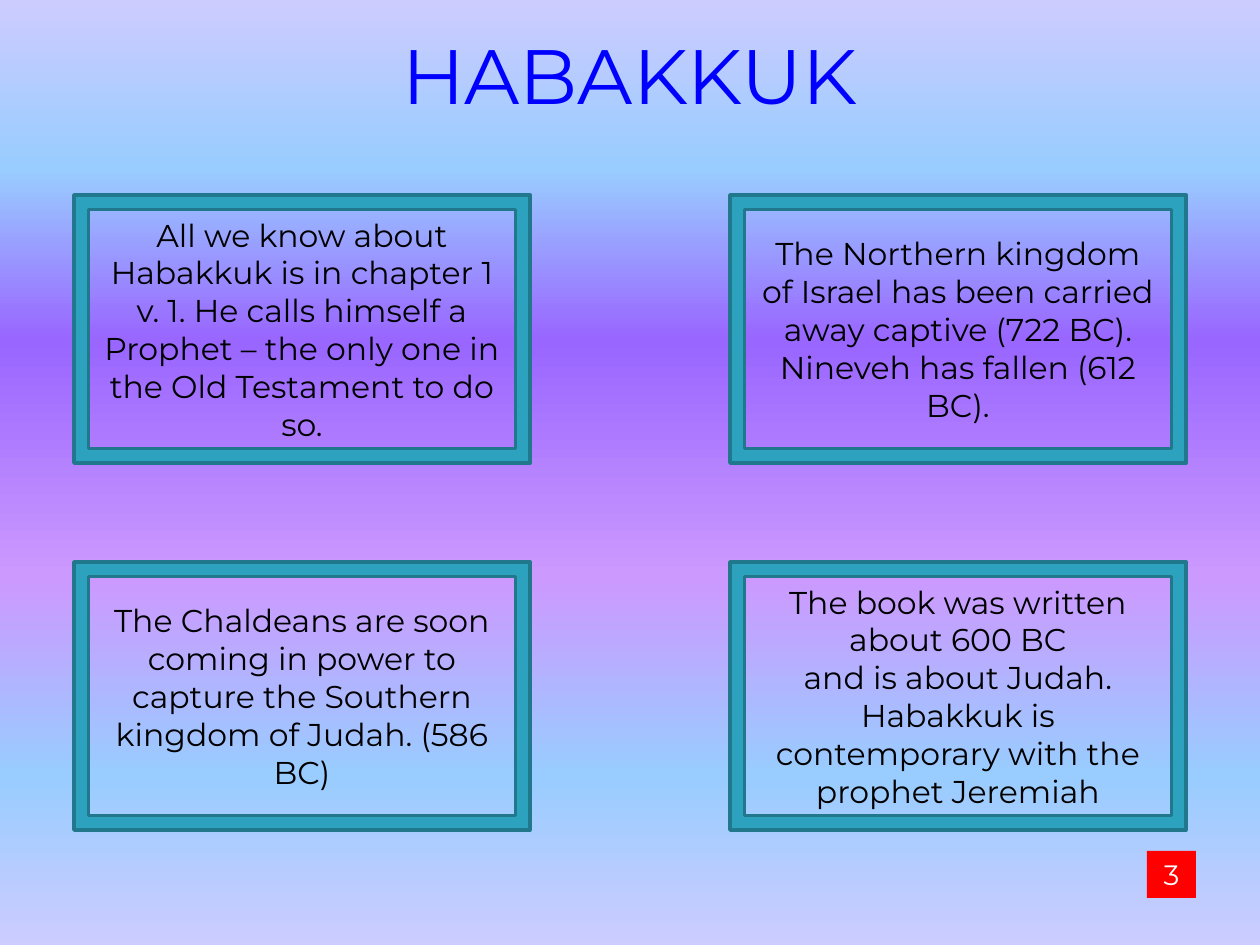
from lxml import etree
from pptx import Presentation, util as u
from pptx.dml.color import RGBColor
from pptx.enum import shapes, text
from pptx.oxml.ns import qn

# Content
TITLE = "HABAKKUK"
FACTS = [
    ["All we know about Habakkuk is in chapter 1 v. 1. He calls himself a "
     "Prophet – the only one in the Old Testament to do so.",
     "The Northern kingdom of Israel has been carried away captive (722 BC). "
     "Nineveh has fallen (612 BC)."],
    ["The Chaldeans are soon coming in power to capture the Southern kingdom "
     "of Judah. (586 BC)",
     "The book was written about 600 BC\nand is about Judah. Habakkuk is "
     "contemporary with the prophet Jeremiah"],
]
PAGE = "3"

# Style
FONT = "Montserrat"
BLUE = RGBColor(0x00, 0x00, 0xFF)
BLACK = RGBColor(0x00, 0x00, 0x00)
WHITE = RGBColor(0xFF, 0xFF, 0xFF)
RED = RGBColor(0xFF, 0x00, 0x00)
TEAL = RGBColor(0x2D, 0xA2, 0xBF)
DARK_TEAL = RGBColor(0x21, 0x78, 0x8D)
LAVENDER = RGBColor(0xCC, 0xCC, 0xFF)
SKY = RGBColor(0x99, 0xCC, 0xFF)
VIOLET = RGBColor(0x99, 0x66, 0xFF)
ORCHID = RGBColor(0xCC, 0x99, 0xFF)
BACKGROUND = [(0, LAVENDER), (18, SKY), (36, VIOLET),
              (61, ORCHID), (82, SKY), (100, LAVENDER)]

# Layout in px, 126 to the inch
SLIDE_W, SLIDE_H = 1260, 945
FRAME_LEFT, FRAME_TOP = 74, 195
FRAME_W, FRAME_H = 456, 268
STEP_X, STEP_Y = 656, 367
FRAME_BORDER = 0.054


def px(*lengths):
    return [round(length * u.Inches(1) / 126) for length in lengths]


def write(shape, words, size, color):
    frame = shape.text_frame
    frame.word_wrap = True
    frame.text = words
    for paragraph in frame.paragraphs:
        paragraph.alignment = text.PP_ALIGN.CENTER
        for run in paragraph.runs:
            run.font.name = FONT
            run.font.size = u.Pt(size)
            run.font.color.rgb = color


def add_box(slide, kind, place, fill):
    box = slide.shapes.add_shape(kind, *px(*place))
    box.shadow.inherit = False
    box.fill.solid()
    box.fill.fore_color.rgb = fill
    return box


def paint_background(slide):
    fill = slide.background.fill
    fill.gradient()
    fill.gradient_angle = 270
    stops = slide.element.find(".//" + qn("a:gsLst"))
    for stop in list(stops):
        stops.remove(stop)
    for percent, color in BACKGROUND:
        stop = etree.SubElement(stops, qn("a:gs"), pos=str(percent * 1000))
        etree.SubElement(stop, qn("a:srgbClr"), val=str(color))


def main():
    deck = Presentation()
    deck.slide_width, deck.slide_height = px(SLIDE_W, SLIDE_H)
    slide = deck.slides.add_slide(deck.slide_layouts[6])
    paint_background(slide)

    # Title
    title = slide.shapes.add_textbox(*px(0, 21, SLIDE_W, 106))
    write(title, TITLE, 44, BLUE)

    # Framed facts
    for row, facts in enumerate(FACTS):
        for column, fact in enumerate(facts):
            place = (FRAME_LEFT + column * STEP_X, FRAME_TOP + row * STEP_Y,
                     FRAME_W, FRAME_H)
            panel = add_box(slide, shapes.MSO_SHAPE.FRAME, place, TEAL)
            panel.adjustments[0] = FRAME_BORDER
            panel.line.color.rgb = DARK_TEAL
            panel.line.width = u.Pt(2)
            panel.text_frame.vertical_anchor = text.MSO_ANCHOR.MIDDLE
            write(panel, fact, 18, BLACK)

    # Page number
    badge = add_box(slide, shapes.MSO_SHAPE.RECTANGLE, (1147, 851, 49, 47), RED)
    badge.line.fill.background()
    badge.text_frame.vertical_anchor = text.MSO_ANCHOR.TOP
    write(badge, PAGE, 16, WHITE)

    deck.save("out.pptx")


if __name__ == "__main__":
    main()
